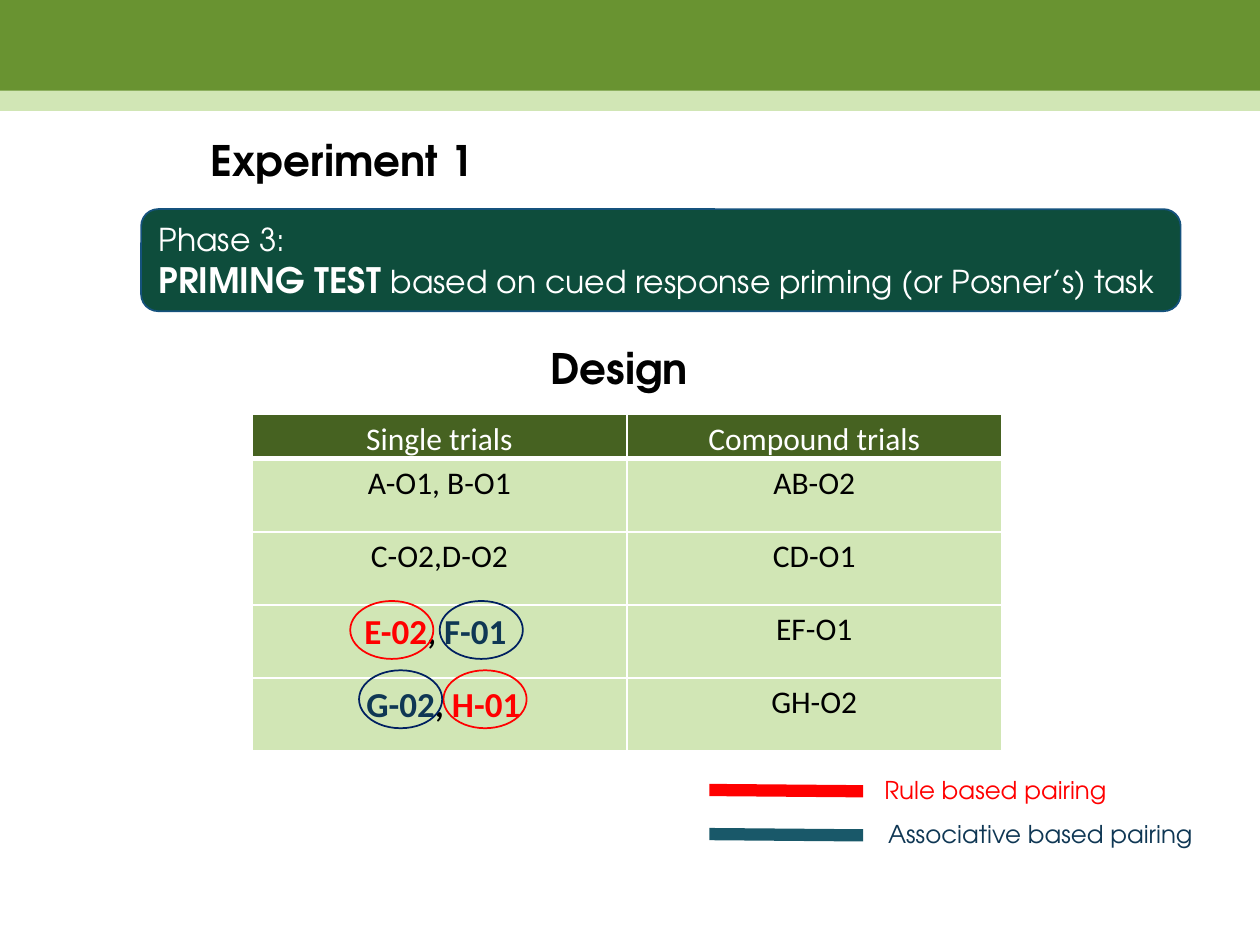
"""Build the Experiment 1 priming test design slide."""
from typing import NamedTuple

from lxml import etree
from pptx import Presentation
from pptx.dml.color import RGBColor
from pptx.enum.shapes import MSO_CONNECTOR, MSO_SHAPE
from pptx.enum.text import MSO_ANCHOR, PP_ALIGN
from pptx.oxml.ns import qn
from pptx.util import Inches, Pt

LEFT, CENTER = PP_ALIGN.LEFT, PP_ALIGN.CENTER
TOP, MIDDLE = MSO_ANCHOR.TOP, MSO_ANCHOR.MIDDLE
RECTANGLE, ROUNDED, OVAL = MSO_SHAPE.RECTANGLE, MSO_SHAPE.ROUNDED_RECTANGLE, MSO_SHAPE.OVAL
STRAIGHT = MSO_CONNECTOR.STRAIGHT
HEADING_FONT, TABLE_FONT = "TeX Gyre Adventor", "Calibri"
COLORS = {
    "black": "000000", "white": "FFFFFF", "red": "FF0000", "navy": "0F3754",
    "ring": "002060", "teal": "195869", "banner": "0E4D3C", "edge": "15527D",
    "green": "699331", "pale": "D1E6B5", "header": "466221",
}


class Run(NamedTuple):
    text: str
    size: float = 18
    color: str = "black"
    bold: bool = False


class Box(NamedTuple):
    left: float
    top: float
    width: float
    height: float


class Block(NamedTuple):
    kind: int
    box: Box
    fill: str | None = None
    line: str | None = None


class Label(NamedTuple):
    box: Box
    run: Run
    align: int = LEFT
    anchor: int = TOP
    spacing: float = 1.0


class Key(NamedTuple):
    top: float
    line_color: str
    label: Label


def pair(text: str, color: str) -> Run:
    return Run(text, 20, color, True)


COMMA = pair(", ", "black")
ROWS = [
    ([Run("Single trials", color="white")], [Run("Compound trials", color="white")]),
    ([Run("A-O1, B-O1")], [Run("AB-O2")]),
    ([Run("C-O2,D-O2")], [Run("CD-O1")]),
    ([pair("E-02", "red"), COMMA, pair("F-01 ", "navy")], [Run("EF-O1")]),
    ([pair(" G-02", "navy"), COMMA, pair("H-01", "red")], [Run("GH-O2")]),
]
KEYS = [
    Key(6.27, "red", Label(Box(6.92, 6.1, 1.98, 0.34), Run("Rule based pairing", 14, "red"))),
    Key(6.62, "teal", Label(Box(6.95, 6.45, 2.78, 0.34), Run("Associative based pairing", 14, "navy"))),
]
RINGS = [
    Block(OVAL, Box(left, top, 0.66, 0.46), line=color)
    for left, top, color in [
        (2.78, 4.77, "red"), (3.52, 5.32, "red"), (3.49, 4.77, "ring"), (2.85, 5.32, "ring"),
    ]
]
BANDS = [
    Block(RECTANGLE, Box(0, 0, 10, 0.87), fill="green"),
    Block(RECTANGLE, Box(0, 0.72, 10, 0.16), fill="pale"),
]
BANNER = Block(ROUNDED, Box(1.12, 1.66, 8.25, 0.81), fill="banner", line="edge")
BANNER_TEXT = [
    [Run("Phase 3:", color="white")],
    [Run("PRIMING TEST ", 20, "white", True),
     Run("based on cued response priming (or Posner’s) task", color="white")],
]
TITLE = Label(Box(0, 0.51, 5.43, 1.57), Run("Experiment 1", 24, bold=True), CENTER, MIDDLE, 0.9)
DESIGN = Label(Box(4.27, 2.67, 2.16, 0.5), Run("Design", 24, bold=True))


def rgb(name: str) -> RGBColor:
    return RGBColor.from_string(COLORS[name])


def inches(box: Box) -> list:
    return [Inches(value) for value in box]


def write(paragraph, runs: list[Run], *, font: str = HEADING_FONT,
          align: int = LEFT, spacing: float = 1.0) -> None:
    paragraph.alignment = align
    paragraph.line_spacing = spacing
    for item in runs:
        run = paragraph.add_run()
        run.text = item.text
        run.font.name = font
        run.font.size = Pt(item.size)
        run.font.bold = item.bold
        run.font.color.rgb = rgb(item.color)


def add_label(slide, label: Label) -> None:
    frame = slide.shapes.add_textbox(*inches(label.box)).text_frame
    frame.word_wrap = True
    frame.vertical_anchor = label.anchor
    write(frame.paragraphs[0], [label.run], align=label.align, spacing=label.spacing)


def add_block(slide, block: Block):
    shape = slide.shapes.add_shape(block.kind, *inches(block.box))
    shape.shadow.inherit = False
    if block.fill:
        shape.fill.solid()
        shape.fill.fore_color.rgb = rgb(block.fill)
    else:
        shape.fill.background()
    if block.line:
        shape.line.color.rgb = rgb(block.line)
        shape.line.width = Pt(1)
    else:
        shape.line.fill.background()
    return shape


def add_key_line(slide, key: Key) -> None:
    line = slide.shapes.add_connector(
        STRAIGHT, Inches(5.63), Inches(key.top), Inches(6.85), Inches(key.top + 0.01))
    line.line.color.rgb = rgb(key.line_color)
    line.line.width = Pt(7)
    etree.SubElement(line._element.spPr, qn("a:effectLst"))


def set_borders(cell, top: float, bottom: float) -> None:
    properties = cell._tc.get_or_add_tcPr()
    for tag, width in [("a:lnL", 1), ("a:lnR", 1), ("a:lnT", top), ("a:lnB", bottom)]:
        border = etree.SubElement(properties, qn(tag), w=str(Pt(width)))
        fill = etree.SubElement(border, qn("a:solidFill"))
        etree.SubElement(fill, qn("a:srgbClr"), val=COLORS["white"])


def add_trials_table(slide) -> None:
    box = Box(2, 3.29, 5.95, 2.66)
    table = slide.shapes.add_table(len(ROWS), len(ROWS[0]), *inches(box)).table
    for index, cells in enumerate(ROWS):
        table.rows[index].height = Inches(0.58 if index else 0.22)
        for column, runs in enumerate(cells):
            cell = table.cell(index, column)
            cell.margin_left = cell.margin_right = Inches(0.06)
            cell.margin_top = cell.margin_bottom = 0
            set_borders(cell, 3 if index == 1 else 1, 1 if index else 3)
            cell.fill.solid()
            cell.fill.fore_color.rgb = rgb("pale" if index else "header")
            write(cell.text_frame.paragraphs[0], runs, font=TABLE_FONT, align=CENTER, spacing=1.15)


def add_banner(slide) -> None:
    frame = add_block(slide, BANNER).text_frame
    frame.word_wrap = True
    frame.vertical_anchor = MIDDLE
    for index, runs in enumerate(BANNER_TEXT):
        write(frame.add_paragraph() if index else frame.paragraphs[0], runs)


def main() -> None:
    presentation = Presentation()
    presentation.slide_width, presentation.slide_height = Inches(10), Inches(7.5)
    slide = presentation.slides.add_slide(presentation.slide_layouts[6])
    add_trials_table(slide)
    for key in KEYS:
        add_key_line(slide, key)
        add_label(slide, key.label)
    for ring in RINGS:
        add_block(slide, ring)
    add_label(slide, TITLE)
    for band in BANDS:
        add_block(slide, band)
    add_banner(slide)
    add_label(slide, DESIGN)
    presentation.save("out.pptx")


if __name__ == "__main__":
    main()
